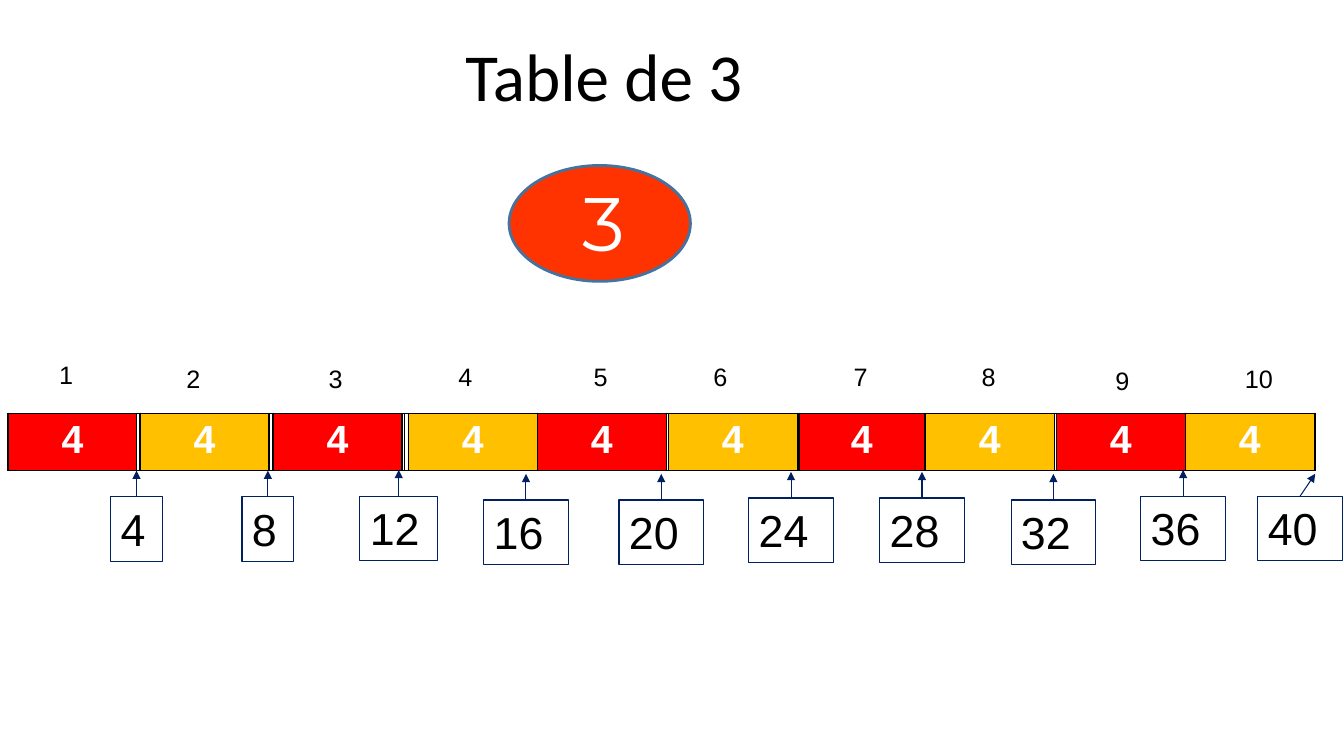
from dataclasses import dataclass

from lxml.etree import SubElement
from pptx import Presentation
from pptx.dml.color import RGBColor as Rgb
from pptx.enum.shapes import MSO_CONNECTOR as Connector
from pptx.enum.shapes import MSO_SHAPE as Shape
from pptx.enum.text import PP_ALIGN as Align
from pptx.oxml import parse_xml
from pptx.oxml.ns import nsdecls, qn
from pptx.util import Cm, Pt


@dataclass(frozen=True)
class Theme:
    """Colours, fonts and type sizes of the slide."""
    black: str = "000000"
    white: str = "FFFFFF"
    navy: str = "002060"
    red: str = "FF0000"
    amber: str = "FFC000"
    orange: str = "FF3300"
    steel: str = "43739E"
    body_font: str = "Arial"
    title_font: str = "Calibri"
    badge_font: str = "Montserrat"
    rank_size: int = 18
    step_size: int = 28
    answer_size: int = 32
    title_size: int = 48
    badge_size: int = 54
    thin: float = 0.75
    border: float = 1
    thick: float = 2


@dataclass(frozen=True)
class Step:
    """Placement, in centimetres, of one step of the number strip."""
    rank_left: float
    rank_top: float
    cell_left: float
    answer_left: float
    answer_top: float
    answer_width: float = 2.13
    cell_width: float = 3.25
    rank_width: float = 0.89
    lean: float = 0
    rise: float = 0.66


STRIP_TOP, STRIP_HEIGHT = 10.41, 1.45
STRIP_WIDTHS = [3.35, 3.35, 3.3, 3.3, 3.3, 3.33, 3.12, 3.3, 3.3, 3.3]
STEP_VALUE = 4
STEPS = [
    Step(1.24, 8.92, 0.2, 2.79, 12.52, answer_width=1.3),
    Step(4.45, 9.02, 3.53, 6.1, 12.52, answer_width=1.3),
    Step(8.03, 9.02, 6.88, 9.07, 12.5, answer_width=1.96),
    Step(11.3, 8.99, 10.29, 12.19, 12.6),
    Step(14.71, 8.99, 13.54, 15.6, 12.6),
    Step(17.73, 8.99, 16.84, 18.87, 12.55),
    Step(21.26, 8.99, 20.14, 22.17, 12.55, cell_width=3.15),
    Step(24.49, 8.99, 23.32, 25.48, 12.6),
    Step(27.86, 9.07, 26.62, 28.75, 12.5),
    Step(31.12, 9.02, 29.87, 31.7, 12.5, rank_width=1.5, lean=0.38, rise=0.56),
]


class Painter:
    """Draws themed elements on the current page."""

    def __init__(self, page, theme):
        self.page = page
        self.theme = theme

    def span(self, para, text, size, color=None, font=None, bold=False, align=Align.LEFT):
        para.alignment = align
        span = para.add_run()
        span.text = text
        span.font.size = Pt(size)
        span.font.name = font or self.theme.body_font
        span.font.bold = bold
        span.font.color.rgb = Rgb.from_string(color or self.theme.black)

    def text(self, left, top, width, height, text, size, **style):
        box = self.page.shapes.add_textbox(Cm(left), Cm(top), Cm(width), Cm(height))
        box.text_frame.word_wrap = True
        self.span(box.text_frame.paragraphs[0], text, size, **style)
        return box

    def framed(self, *args, **style):
        box = self.text(*args, **style)
        box.line.color.rgb = Rgb.from_string(self.theme.navy)
        box.line.width = Pt(self.theme.thin)

    def ellipse(self, left, top, width, height):
        badge = self.page.shapes.add_shape(Shape.OVAL, Cm(left), Cm(top), Cm(width), Cm(height))
        badge.shadow.inherit = False
        badge.fill.solid()
        badge.fill.fore_color.rgb = Rgb.from_string(self.theme.orange)
        badge.line.color.rgb = Rgb.from_string(self.theme.steel)
        badge.line.width = Pt(self.theme.thick)

    def arrow(self, x1, y1, x2, y2):
        arrow = self.page.shapes.add_connector(Connector.STRAIGHT, Cm(x1), Cm(y1), Cm(x2), Cm(y2))
        arrow.line.color.rgb = Rgb.from_string(self.theme.navy)
        arrow.line.width = Pt(self.theme.thin)
        SubElement(arrow.line._get_or_add_ln(), qn("a:tailEnd"), type="triangle")
        SubElement(arrow._element.spPr, qn("a:effectLst"))

    def border(self, cell):
        properties = cell._tc.get_or_add_tcPr()
        for place, side in enumerate(("lnL", "lnR", "lnT", "lnB")):
            properties.insert(place, parse_xml(
                f'<a:{side} {nsdecls("a")} w="{Pt(self.theme.border)}"><a:solidFill>'
                f'<a:srgbClr val="{self.theme.black}"/></a:solidFill></a:{side}>'))

    def table(self, left, widths, text="", fill=None):
        frame = self.page.shapes.add_table(
            1, len(widths), Cm(left), Cm(STRIP_TOP), Cm(sum(widths)), Cm(STRIP_HEIGHT))
        table = frame.table
        table.first_row = table.horz_banding = False
        for column, width in zip(table.columns, widths):
            column.width = Cm(width)
        for cell in table.iter_cells():
            if fill:
                cell.fill.solid()
                cell.fill.fore_color.rgb = Rgb.from_string(fill)
            else:
                cell.fill.background()
            self.border(cell)
            if text:
                self.span(cell.text_frame.paragraphs[0], text, self.theme.step_size,
                          color=self.theme.white, bold=True, align=Align.CENTER)


def main():
    theme = Theme()
    deck = Presentation()
    deck.slide_width, deck.slide_height = Cm(33.87), Cm(19.05)
    painter = Painter(deck.slides.add_slide(deck.slide_layouts[6]), theme)

    painter.text(11.48, 0.74, 8.33, 2.29, "Table de 3", theme.title_size, font=theme.title_font)
    painter.ellipse(12.83, 4.17, 4.57, 2.92)
    painter.text(13.64, 4.32, 3.15, 2.57, "3", theme.badge_size, color=theme.white,
                 font=theme.badge_font, align=Align.CENTER)

    painter.table(STEPS[0].cell_left, STRIP_WIDTHS)
    for rank, step in enumerate(STEPS, start=1):
        painter.table(step.cell_left, [step.cell_width], str(STEP_VALUE),
                      theme.red if rank % 2 else theme.amber)
        painter.text(step.rank_left, step.rank_top, step.rank_width, 1.02,
                     str(rank), theme.rank_size)
        painter.framed(step.answer_left, step.answer_top, step.answer_width, 1.63,
                       str(rank * STEP_VALUE), theme.answer_size)
        middle = step.answer_left + step.answer_width / 2
        painter.arrow(middle, step.answer_top, middle + step.lean, step.answer_top - step.rise)

    deck.save("out.pptx")


if __name__ == "__main__":
    main()
